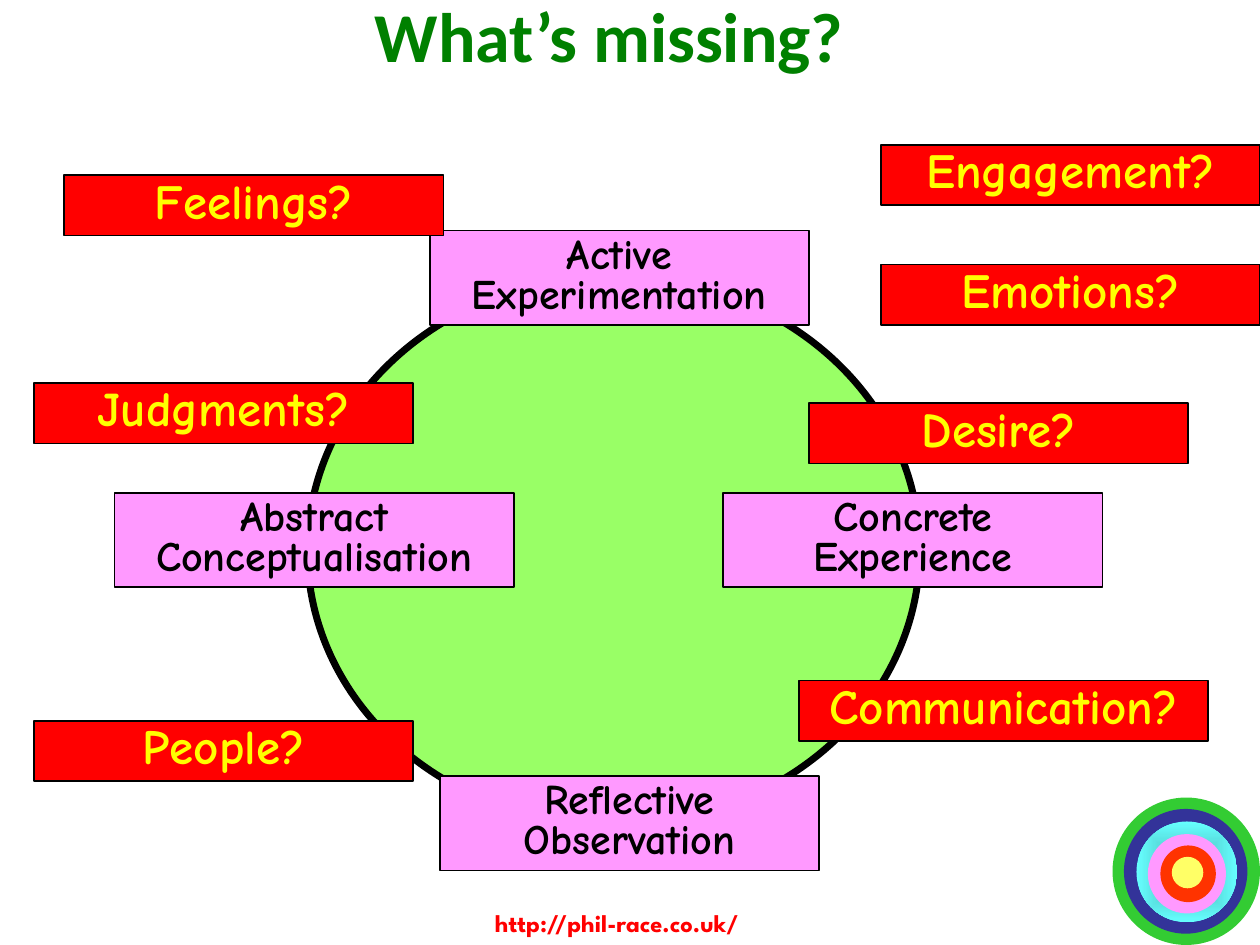
import pptx
import pptx.dml.color
import pptx.enum.shapes
import pptx.enum.text
import pptx.oxml
import pptx.oxml.ns
import pptx.util
from pptx.util import Inches

TITLE = "What’s missing?"
WEB_ADDRESS = "http://phil-race.co.uk/"

# left, top, width, height, fill; a pair of fills is a gradient from the centre out
TARGET_RINGS = [
    (8.83, 6.33, 1.17, 1.17, "33CC33"),
    (8.92, 6.42, 0.98, 0.99, "333399"),
    (9.02, 6.52, 0.80, 0.80, ("47B2B2", "66FFFF")),
    (9.11, 6.62, 0.62, 0.63, "FF99FF"),
    (9.21, 6.71, 0.44, 0.45, "FF3300"),
    (9.30, 6.80, 0.25, 0.25, "FFFF66"),
]
CYCLE = (2.44, 2.19, 4.86, 4.36)

# left, top, width, lines
STAGES = [
    (3.41, 1.83, 3.01, ["Active", "Experimentation"]),
    (5.74, 3.91, 3.01, ["Concrete", "Experience"]),
    (3.49, 6.16, 3.01, ["Reflective", "Observation"]),
    (0.91, 3.91, 3.17, ["Abstract", "Conceptualisation"]),
]
MISSING = [
    (0.51, 1.39, 3.01, ["Feelings?"]),
    (6.99, 2.10, 3.01, ["Emotions?"]),
    (0.27, 5.72, 3.01, ["People?"]),
    (6.34, 5.40, 3.25, ["Communication?"]),
    (0.27, 3.04, 3.01, ["Judgments?"]),
    (6.42, 3.20, 3.01, ["Desire?"]),
    (6.99, 1.15, 3.01, ["Engagement?"]),
]
STAGE_STYLE = {"height": 0.75, "fill": "FF99FF", "size": 24, "color": "000000"}
MISSING_STYLE = {"height": 0.48, "fill": "FF0000", "size": 28, "color": "FFFF00"}

SHAPES = pptx.enum.shapes.MSO_SHAPE
CENTER = pptx.enum.text.PP_ALIGN.CENTER
ANCHOR_MIDDLE = pptx.enum.text.MSO_ANCHOR.MIDDLE


def rgb(hex_color):
    return pptx.dml.color.RGBColor.from_string(hex_color)


def format_text(frame, size, font_name, color, align=None, spacing=None):
    for paragraph in frame.paragraphs:
        paragraph.alignment = align
        paragraph.line_spacing = spacing
        for run in paragraph.runs:
            run.font.size = pptx.util.Pt(size)
            run.font.name = font_name
            run.font.bold = True
            run.font.color.rgb = rgb(color)


def fill_from_centre(shape, colors):
    """Give the shape a gradient that follows its outline."""
    shape.fill.gradient()
    for stop, color in zip(shape.fill.gradient_stops, colors):
        stop.color.rgb = rgb(color)
    gradient = shape.fill._fill._gradFill
    direction = gradient.find(pptx.oxml.ns.qn("a:lin"))
    gradient.replace(direction, pptx.oxml.parse_xml(
        f'<a:path {pptx.oxml.ns.nsdecls("a")} path="shape">'
        '<a:fillToRect l="50000" t="50000" r="50000" b="50000"/></a:path>'))


def add_figure(slide, preset, box, fill, line_width=None):
    shape = slide.shapes.add_shape(preset, *map(Inches, box))
    shape.shadow.inherit = False
    if isinstance(fill, tuple):
        fill_from_centre(shape, fill)
    else:
        shape.fill.solid()
        shape.fill.fore_color.rgb = rgb(fill)
    if line_width:
        shape.line.color.rgb = rgb("000000")
        shape.line.width = pptx.util.Pt(line_width)
    else:
        shape.line.fill.background()
    return shape


def add_label(slide, left, top, width, lines, style):
    label = add_figure(slide, SHAPES.RECTANGLE, (left, top, width, style["height"]),
                       style["fill"], 1)
    frame = label.text_frame
    frame.text = "\n".join(lines)
    frame.word_wrap = True
    frame.vertical_anchor = pptx.enum.text.MSO_ANCHOR.TOP
    format_text(frame, style["size"], "Comic Neue", style["color"], CENTER, 0.8)


def main():
    deck = pptx.Presentation()
    deck.slide_width, deck.slide_height = Inches(10), Inches(7.5)
    slide = deck.slides.add_slide(deck.slide_layouts[5])

    for *box, fill in TARGET_RINGS:
        add_figure(slide, SHAPES.OVAL, box, fill)

    address = slide.shapes.add_textbox(*map(Inches, (3.83, 7.16, 2.89, 0.34)))
    address.text_frame.word_wrap = True
    address.text_frame.text = WEB_ADDRESS
    format_text(address.text_frame, 14, "League Spartan", "FF0000")

    title = slide.shapes.title
    title.left, title.top, title.width, title.height = map(
        Inches, (0.59, -0.27, 8.49, 1.19))
    title.text_frame.text = TITLE
    title.text_frame.vertical_anchor = ANCHOR_MIDDLE
    format_text(title.text_frame, 40, "Calibri", "008000", CENTER, 0.85)

    add_figure(slide, SHAPES.OVAL, CYCLE, "99FF66", 4)
    for labels, style in ((STAGES, STAGE_STYLE), (MISSING, MISSING_STYLE)):
        for label in labels:
            add_label(slide, *label, style)

    deck.save("out.pptx")


if __name__ == "__main__":
    main()
